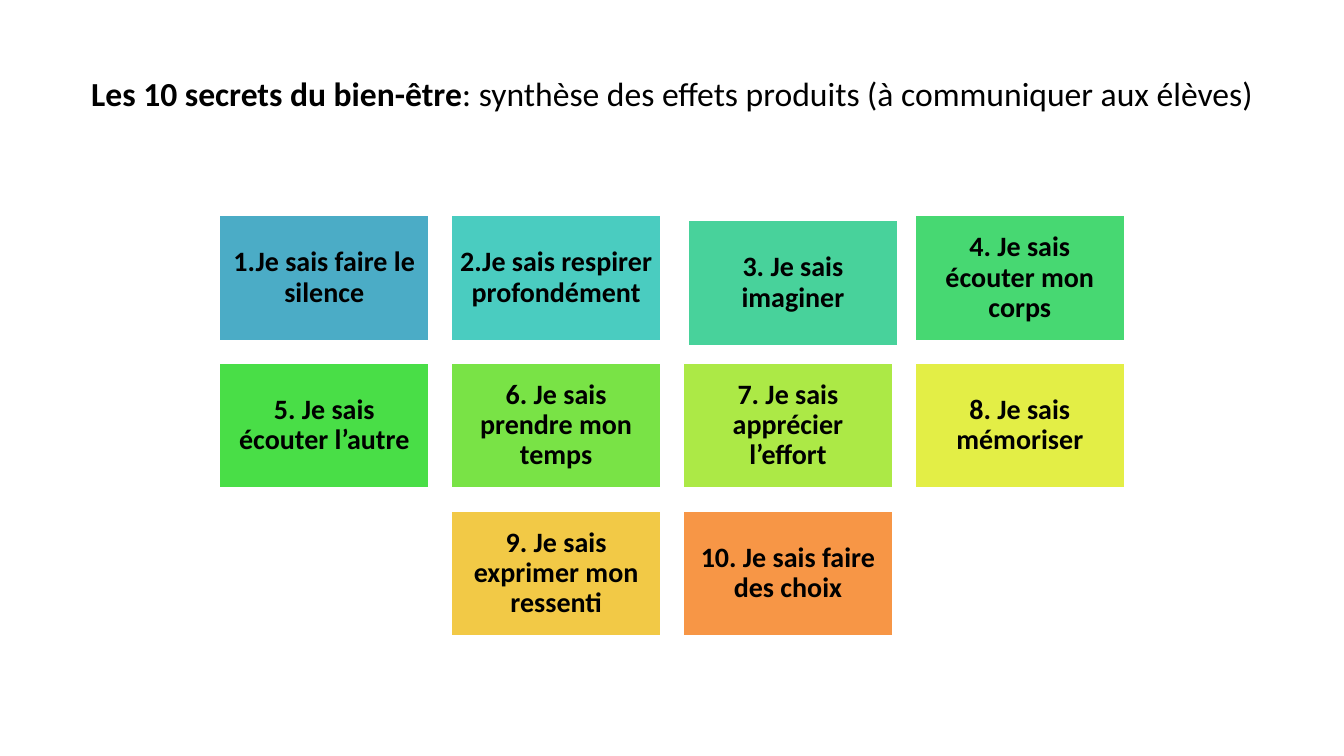
from pptx import Presentation
from pptx.dml.color import RGBColor
from pptx.enum.shapes import MSO_SHAPE
from pptx.enum.text import MSO_ANCHOR, PP_ALIGN
from pptx.util import Pt

BLACK = RGBColor(0x00, 0x00, 0x00)
WHITE = RGBColor(0xFF, 0xFF, 0xFF)
FONT = "Calibri"

# Label and fill of each card, row by row
SECRETS = [
    ("1.Je sais faire le silence", RGBColor(0x4B, 0xAC, 0xC6)),
    ("2.Je sais respirer profondément", RGBColor(0x4A, 0xCC, 0xC0)),
    ("3. Je sais imaginer", RGBColor(0x48, 0xD2, 0x9B)),
    ("4. Je sais écouter mon corps", RGBColor(0x47, 0xD8, 0x72)),
    ("5. Je sais écouter l’autre", RGBColor(0x49, 0xDE, 0x47)),
    ("6. Je sais prendre mon temps", RGBColor(0x79, 0xE3, 0x46)),
    ("7. Je sais apprécier l’effort", RGBColor(0xAC, 0xE9, 0x46)),
    ("8. Je sais mémoriser", RGBColor(0xE3, 0xEE, 0x46)),
    ("9. Je sais exprimer mon ressenti", RGBColor(0xF2, 0xC9, 0x46)),
    ("10. Je sais faire des choix", RGBColor(0xF7, 0x96, 0x46)),
]
COLUMNS = 4
GRID_LEFT, GRID_TOP = 156.4, 153.4
CARD_WIDTH, CARD_HEIGHT = 150.5, 90.3
COLUMN_STEP, ROW_STEP = 165.6, 105.5
NUDGED_CARD, NUDGE = 2, 3.6  # the third card sits slightly off the grid


def style_span(span, size, bold):
    span.font.name = FONT
    span.font.size = Pt(size)
    span.font.bold = bold
    span.font.color.rgb = BLACK


deck = Presentation()
deck.slide_width, deck.slide_height = Pt(960), Pt(540)
page = deck.slides.add_slide(deck.slide_layouts[6])

# Title
title = page.shapes.add_textbox(Pt(48), Pt(21.6), Pt(864), Pt(90))
title.text_frame.word_wrap = True
title.text_frame.vertical_anchor = MSO_ANCHOR.MIDDLE
para = title.text_frame.paragraphs[0]
para.alignment = PP_ALIGN.CENTER
for words, bold in [
    ("Les 10 secrets du bien-être", True),
    (": synthèse des effets produits (à communiquer aux élèves)", False),
]:
    span = para.add_run()
    span.text = words
    style_span(span, 24, bold)

# Cards, with a shorter last row centred under the others
for index, (label, color) in enumerate(SECRETS):
    row, column = divmod(index, COLUMNS)
    row_length = min(COLUMNS, len(SECRETS) - row * COLUMNS)
    indent = (COLUMNS - row_length) / 2
    shift = NUDGE if index == NUDGED_CARD else 0
    card = page.shapes.add_shape(
        MSO_SHAPE.RECTANGLE,
        Pt(GRID_LEFT + (column + indent) * COLUMN_STEP + shift),
        Pt(GRID_TOP + row * ROW_STEP + shift),
        Pt(CARD_WIDTH),
        Pt(CARD_HEIGHT),
    )
    card.shadow.inherit = False
    card.fill.solid()
    card.fill.fore_color.rgb = color
    card.line.color.rgb = WHITE
    card.line.width = Pt(2)

    frame = card.text_frame
    frame.text = label
    frame.word_wrap = True
    frame.vertical_anchor = MSO_ANCHOR.MIDDLE
    frame.margin_left = frame.margin_right = Pt(6)
    frame.margin_top = frame.margin_bottom = Pt(6)
    para = frame.paragraphs[0]
    para.alignment = PP_ALIGN.CENTER
    para.line_spacing = 0.9
    style_span(para.runs[0], 20, True)

deck.save("out.pptx")
